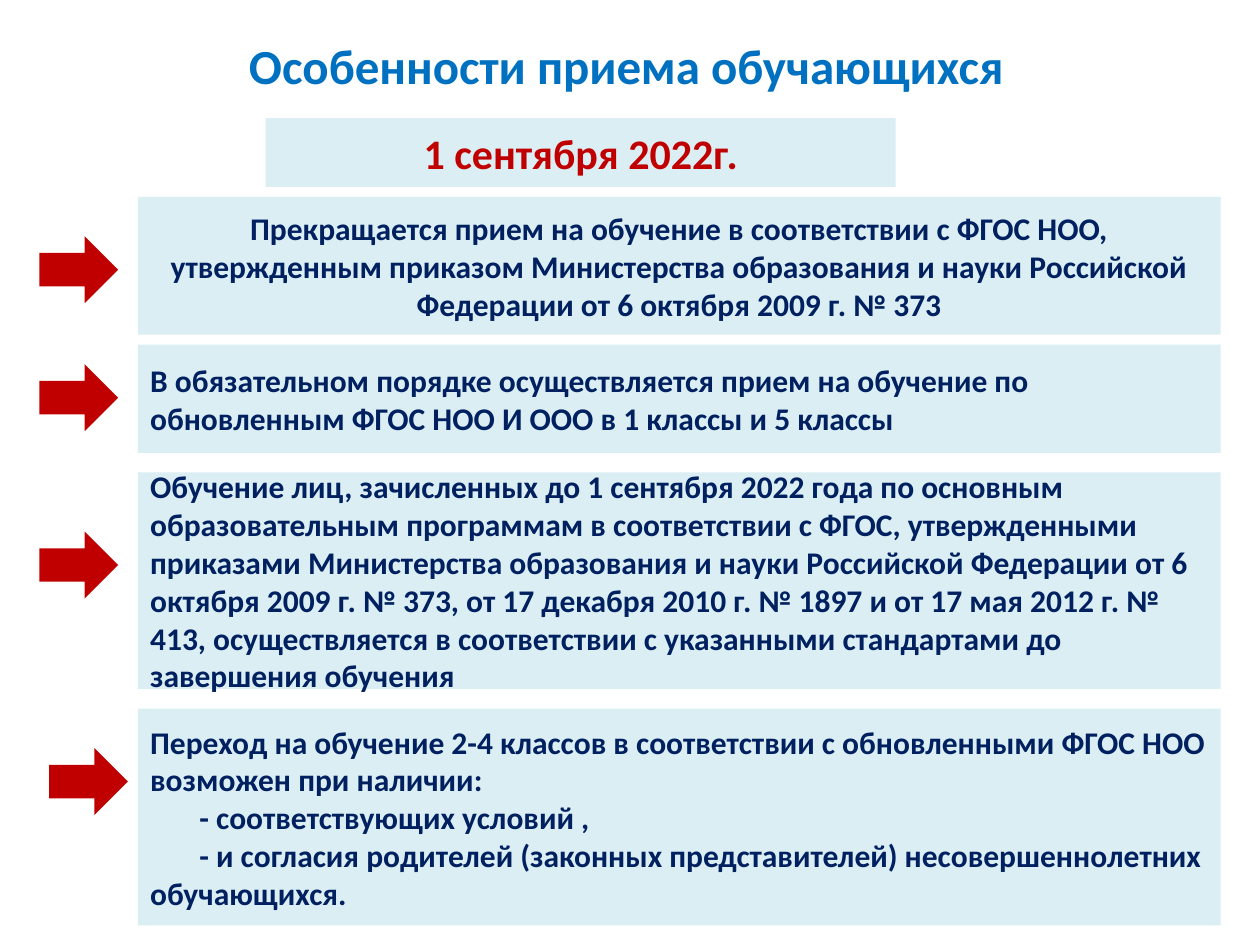
import pptx
import pptx.dml.color
import pptx.enum.shapes
import pptx.enum.text
import pptx.util

RGBColor = pptx.dml.color.RGBColor
MSO_SHAPE = pptx.enum.shapes.MSO_SHAPE
PP_ALIGN = pptx.enum.text.PP_ALIGN

PALE_BLUE = RGBColor(0xDB, 0xEE, 0xF4)
RED = RGBColor(0xC0, 0x00, 0x00)
NAVY = RGBColor(0x00, 0x20, 0x60)
BLUE = RGBColor(0x00, 0x70, 0xC0)

deck = pptx.Presentation()
deck.slide_width = pptx.util.Inches(10)
deck.slide_height = pptx.util.Inches(7.5)
page = deck.slides.add_slide(deck.slide_layouts[5])

# The slide is 128 square grid units wide and 96 high.
UNIT = deck.slide_width / 128


def add_block(kind, color, *cells):
    """Place a flat shape at left, top, width, height in grid units."""
    block = page.shapes.add_shape(kind, *(int(cell * UNIT) for cell in cells))
    block.shadow.inherit = False
    block.fill.solid()
    block.fill.fore_color.rgb = color
    block.line.fill.background()
    return block


def write(box, lines, size, color, align, indent=0):
    """Fill a box with bold paragraphs; those after the first get the indent."""
    frame = box.text_frame
    frame.word_wrap = True
    frame.vertical_anchor = pptx.enum.text.MSO_ANCHOR.MIDDLE
    for number, line in enumerate(lines):
        para = frame.add_paragraph() if number else frame.paragraphs[0]
        para.alignment = align
        if number and indent:
            layout = para._p.get_or_add_pPr()
            layout.set("marL", "0")
            layout.set("indent", str(int(indent * UNIT)))
        span = para.add_run()
        span.text = line
        span.font.color.rgb = color
        for name, value in {"name": "Calibri", "size": pptx.util.Pt(size), "bold": True}.items():
            setattr(span.font, name, value)


title = page.shapes.title
for name, cells in {"left": 6, "top": 2, "width": 115.2, "height": 9.2}.items():
    setattr(title, name, int(cells * UNIT))
write(title, ["Особенности приема обучающихся"], 28, BLUE, PP_ALIGN.CENTER)

date_box = add_block(MSO_SHAPE.RECTANGLE, PALE_BLUE, 27, 12, 64, 7)
write(date_box, ["1 сентября 2022г."], 24, RED, PP_ALIGN.CENTER)

# Each rule: box top, box height, arrow left, arrow top, alignment, paragraphs
rules = [
    (20, 14, 4, 24, PP_ALIGN.CENTER, [
        "Прекращается прием на обучение в соответствии с ФГОС НОО, "
        "утвержденным приказом Министерства образования и науки Российской "
        "Федерации от 6 октября 2009 г. № 373"]),
    (35, 11, 4, 37, PP_ALIGN.LEFT, [
        "В обязательном порядке осуществляется прием на обучение по "
        "обновленным ФГОС НОО И ООО в 1 классы и 5 классы"]),
    (48, 22, 4, 54, PP_ALIGN.LEFT, [
        "Обучение лиц, зачисленных до 1 сентября 2022 года по основным "
        "образовательным программам в соответствии с ФГОС, утвержденными "
        "приказами Министерства образования и науки Российской Федерации от 6 "
        "октября 2009 г. № 373, от 17 декабря 2010 г. № 1897 и от 17 мая 2012 г. № "
        "413, осуществляется в соответствии с указанными стандартами до "
        "завершения обучения"]),
    (72, 22, 5, 76, PP_ALIGN.LEFT, [
        "Переход на обучение 2-4 классов в соответствии с обновленными ФГОС НОО "
        "возможен при наличии:",
        "- соответствующих условий ,",
        "- и согласия родителей (законных представителей) несовершеннолетних "
        "обучающихся."]),
]
for top, height, arrow_left, arrow_top, align, lines in rules:
    rule_box = add_block(MSO_SHAPE.RECTANGLE, PALE_BLUE, 14, top, 110, height)
    write(rule_box, lines, 18, NAVY, align, indent=5)
    add_block(MSO_SHAPE.RIGHT_ARROW, RED, arrow_left, arrow_top, 8, 6.8)

deck.save("out.pptx")
